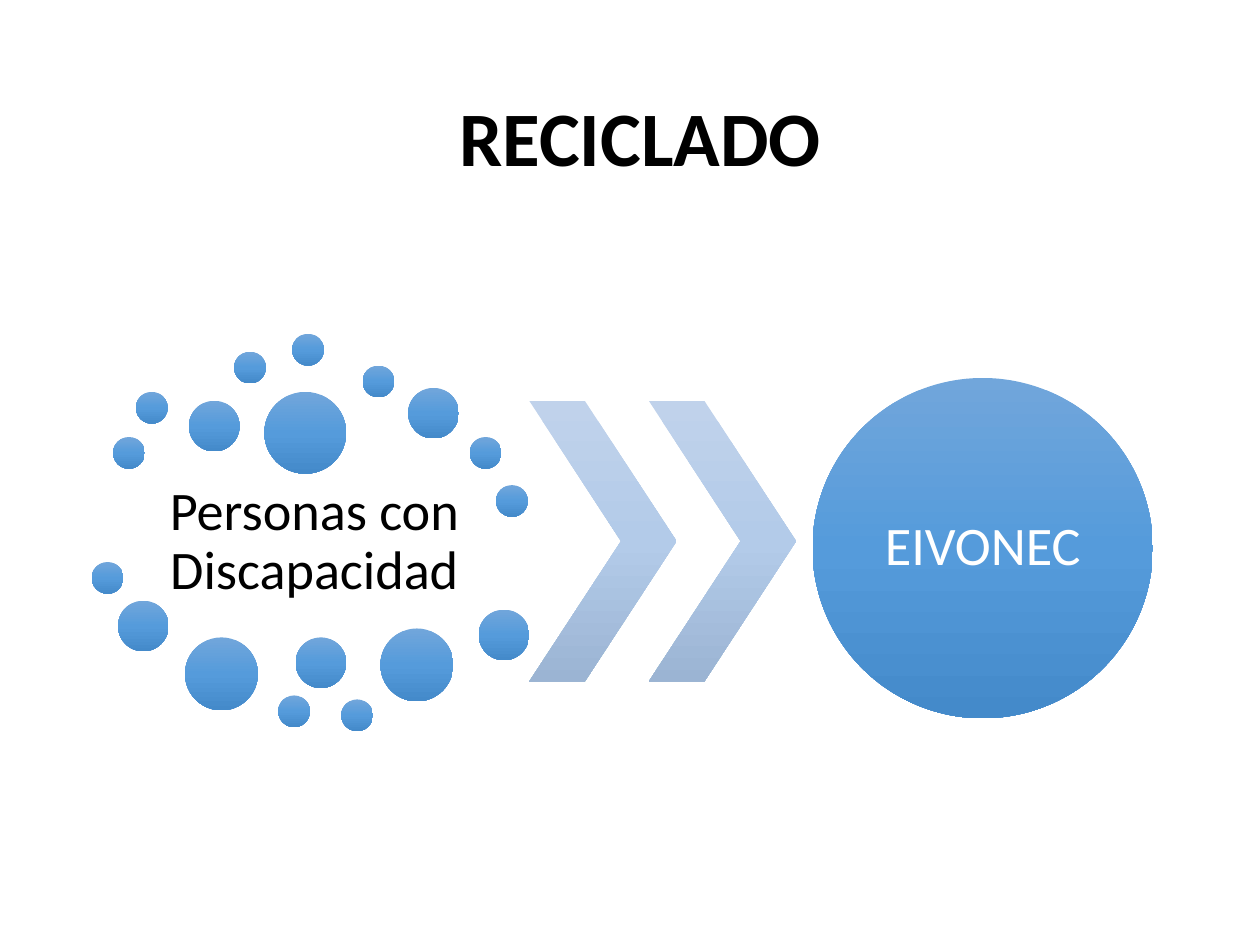
import copy

import pptx
import pptx.dml.color
import pptx.enum.shapes
import pptx.enum.text
import pptx.oxml.ns
import pptx.util

Cm = pptx.util.Cm
SHAPES = pptx.enum.shapes.MSO_SHAPE
ALIGN = pptx.enum.text.PP_ALIGN

BLUE = ("71A6DB", "559BDB", "448ACA")
PALE_BLUE = ("C0D2EB", "B3CBE9", "9BB4D3")

SMALL, MEDIUM, LARGE, LARGEST = 0.64, 1.02, 1.47, 1.65
# left, top and diameter in cm, from the corner of the cluster
BUBBLES = [
    (0.43, 2.08, SMALL), (0.89, 1.17, SMALL), (1.96, 1.35, MEDIUM),
    (2.87, 0.36, SMALL), (4.04, 0, SMALL), (5.46, 0.64, SMALL),
    (6.38, 1.09, MEDIUM), (7.62, 2.08, SMALL), (8.15, 3.05, SMALL),
    (3.48, 1.17, LARGEST), (0, 4.6, SMALL), (0.53, 5.38, MEDIUM),
    (1.88, 6.12, LARGE), (3.76, 7.29, SMALL), (4.11, 6.12, MEDIUM),
    (5.03, 7.37, SMALL), (5.82, 5.94, LARGE), (7.8, 5.56, MEDIUM),
]


def rgb(value):
    return pptx.dml.color.RGBColor.from_string(value)


def write(frame, text, size=31, color="000000", bold=False, align=ALIGN.CENTER, inset=None):
    frame.word_wrap = True
    frame.auto_size = pptx.enum.text.MSO_AUTO_SIZE.NONE
    frame.vertical_anchor = pptx.enum.text.MSO_ANCHOR.MIDDLE
    if inset is not None:
        frame.margin_left = frame.margin_right = Cm(inset)
        frame.margin_top = frame.margin_bottom = Cm(inset)
    paragraph = frame.paragraphs[0]
    paragraph.alignment = align
    paragraph.line_spacing = 0.9
    run = paragraph.add_run()
    run.text = text
    run.font.name = "Calibri"
    run.font.size = pptx.util.Pt(size)
    run.font.bold = bold
    run.font.color.rgb = rgb(color)


def add_label(slide, left, top, width, height, text, **style):
    label = slide.shapes.add_textbox(Cm(left), Cm(top), Cm(width), Cm(height))
    write(label.text_frame, text, **style)


def add_gradient_shape(slide, kind, left, top, width, height, colors):
    """Add a borderless shape shaded evenly from top to bottom."""
    shape = slide.shapes.add_shape(kind, Cm(left), Cm(top), Cm(width), Cm(height))
    shape.shadow.inherit = False
    shape.line.fill.background()
    shape.fill.gradient()
    shape.fill.gradient_angle = 270
    stop_list = shape._element.spPr.find(".//" + pptx.oxml.ns.qn("a:gsLst"))
    stop_list.insert(1, copy.deepcopy(stop_list[0]))
    for index, (stop, color) in enumerate(zip(shape.fill.gradient_stops, colors)):
        stop.position = index / (len(colors) - 1)
        stop.color.rgb = rgb(color)
    return shape


def add_title(slide, left, top, width, height):
    title = slide.shapes.title
    title.left, title.top = Cm(left), Cm(top)
    title.width, title.height = Cm(width), Cm(height)
    write(title.text_frame, "RECICLADO", size=44, bold=True, align=ALIGN.RIGHT)


def add_bubble_cluster(slide, left, top, width):
    add_label(slide, left + 0.46, top + 2.87, width - 0.76, 2.67,
              "Personas con Discapacidad", inset=0.1)
    for x, y, diameter in BUBBLES:
        add_gradient_shape(slide, SHAPES.OVAL, left + x, top + y, diameter, diameter, BLUE)


def add_chevrons(slide, left, top, width, height):
    chevron_width = 2.97
    for x in (left, left + width - chevron_width):
        chevron = add_gradient_shape(slide, SHAPES.CHEVRON, x, top, chevron_width, height, PALE_BLUE)
        chevron.adjustments[0] = 0.623


def add_result(slide, left, top, diameter):
    add_gradient_shape(slide, SHAPES.OVAL, left, top, diameter, diameter, BLUE)
    margin = 0.99
    side = diameter - 2 * margin
    add_label(slide, left + margin, top + margin, side, side,
              "EIVONEC", color="FFFFFF", inset=0)


def main():
    deck = pptx.Presentation()
    deck.slide_width, deck.slide_height = Cm(25.4), Cm(19.05)
    slide = deck.slides.add_slide(deck.slide_layouts.get_by_name("Title Only"))
    add_title(slide, 1.75, 1.02, 15.06, 3.68)
    add_bubble_cluster(slide, 1.85, 6.73, 8.81)
    add_chevrons(slide, 10.67, 8.08, 5.38, 5.66)
    add_result(slide, 16.38, 7.62, 6.86)
    deck.save("out.pptx")


if __name__ == "__main__":
    main()
